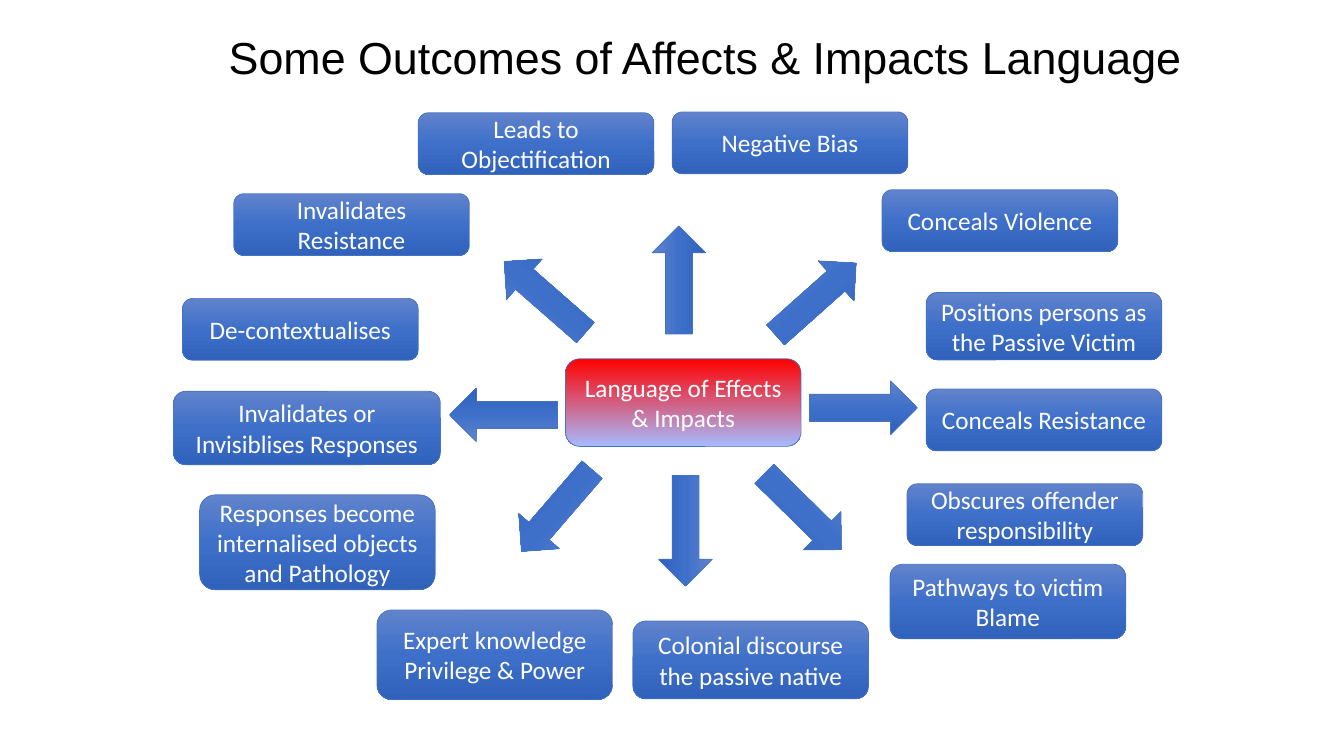
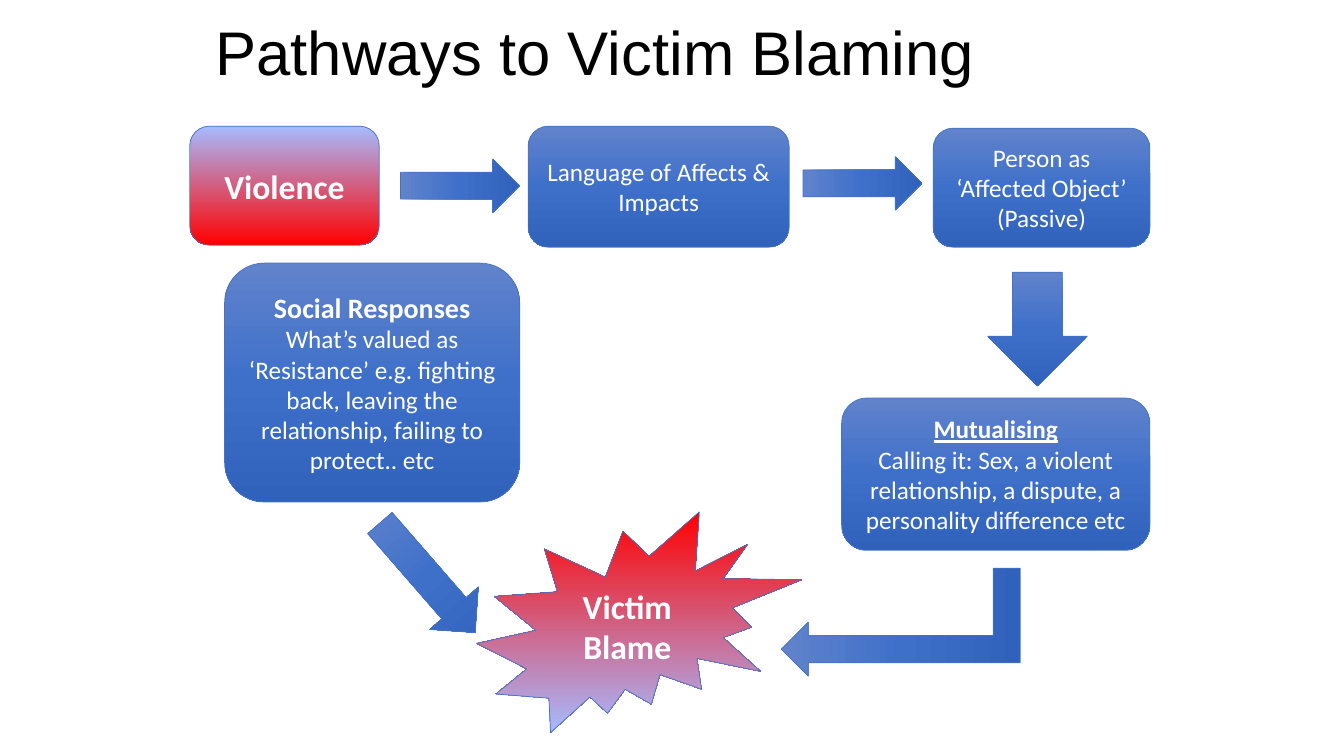
from copy import deepcopy

from pptx import Presentation
from pptx.dml.color import RGBColor
from pptx.enum.shapes import MSO_SHAPE
from pptx.enum.text import MSO_ANCHOR, MSO_AUTO_SIZE, PP_ALIGN
from pptx.oxml.ns import qn
from pptx.util import Cm, Pt

# Shared colours, each gradient running from top to bottom
BLUE = ["6183CB", "3E70CA", "3062BB"]
RED_TOP = ["FF0000", "A6BBFF"]
RED_BOTTOM = ["A6BBFF", "FF0000"]
OUTLINE = "4472C4"
WHITE = "FFFFFF"
BLACK = "000000"


def add_page(title, size, left, top, width, height):
    page = deck.slides.add_slide(deck.slide_layouts[5])
    box = page.shapes.title
    box.left, box.top, box.width, box.height = Cm(left), Cm(top), Cm(width), Cm(height)
    frame = box.text_frame
    frame.text = title
    frame.auto_size = MSO_AUTO_SIZE.NONE
    frame.vertical_anchor = MSO_ANCHOR.MIDDLE
    para = frame.paragraphs[0]
    para.alignment = PP_ALIGN.LEFT
    para.line_spacing = 0.9
    para.font.name = "Arial"
    para.font.size = Pt(size)
    para.font.color.rgb = RGBColor.from_string(BLACK)
    return page


def add_box(page, kind, left, top, width, height, lines=(), colours=BLUE, rotation=0):
    """Each line is (text, size, bold, underline)."""
    box = page.shapes.add_shape(kind, Cm(left), Cm(top), Cm(width), Cm(height))
    box.rotation = rotation
    box.shadow.inherit = False
    box.line.color.rgb = RGBColor.from_string(OUTLINE)
    box.line.width = Pt(0.5)

    box.fill.gradient()
    stops = box._element.spPr.find(qn("a:gradFill")).find(qn("a:gsLst"))
    while len(stops) < len(colours):
        stops.append(deepcopy(stops[-1]))
    for index, (stop, colour) in enumerate(zip(box.fill.gradient_stops, colours)):
        stop.color.rgb = RGBColor.from_string(colour)
        stop.position = index / (len(colours) - 1)
    box.fill.gradient_angle = 270

    frame = box.text_frame
    frame.word_wrap = True
    frame.vertical_anchor = MSO_ANCHOR.MIDDLE
    for index, (text, size, bold, underline) in enumerate(lines):
        para = frame.add_paragraph() if index else frame.paragraphs[0]
        para.text = text
        para.alignment = PP_ALIGN.CENTER
        para.font.name = "Calibri"
        para.font.size = Pt(size)
        para.font.bold = bold
        para.font.underline = underline
        para.font.color.rgb = RGBColor.from_string(WHITE)
    return box


deck = Presentation()
deck.slide_width, deck.slide_height = Cm(33.87), Cm(19.05)

# Slide 1: outcomes around a central box
page = add_page("Some Outcomes of Affects & Impacts Language", 32, 5.51, 0.76, 25.5, 1.5)

BOX_WIDTH, BOX_HEIGHT = 5.94, 1.56
outcomes = [
    ("Invalidates Resistance", 5.89, 4.88, BOX_WIDTH, BOX_HEIGHT),
    ("Obscures offender responsibility", 22.86, 12.19, BOX_WIDTH, BOX_HEIGHT),
    ("Positions persons as the Passive Victim", 23.34, 7.37, BOX_WIDTH, 1.7),
    ("De-contextualises", 4.6, 7.52, BOX_WIDTH, BOX_HEIGHT),
    ("Conceals Resistance", 23.34, 9.8, BOX_WIDTH, BOX_HEIGHT),
    ("Invalidates or Invisiblises Responses", 4.37, 9.86, 6.73, 1.85),
    ("Expert knowledge Privilege & Power", 9.5, 15.37, BOX_WIDTH, 2.26),
    ("Negative Bias", 16.94, 2.82, BOX_WIDTH, BOX_HEIGHT),
    ("Colonial discourse the passive native", 15.95, 15.65, BOX_WIDTH, 1.96),
    ("Conceals Violence", 22.23, 4.78, BOX_WIDTH, BOX_HEIGHT),
    ("Leads to Objectification", 10.54, 2.84, BOX_WIDTH, BOX_HEIGHT),
    ("Responses become internalised objects and Pathology", 5.03, 12.47, BOX_WIDTH, 2.39),
    ("Pathways to victim Blame", 22.43, 14.22, BOX_WIDTH, 1.88),
]
for text, *place in outcomes:
    add_box(page, MSO_SHAPE.ROUNDED_RECTANGLE, *place, [(text, 18, False, False)])
add_box(page, MSO_SHAPE.ROUNDED_RECTANGLE, 14.25, 9.04, BOX_WIDTH, 2.21,
        [("Language of Effects & Impacts", 18, False, False)], RED_TOP)

# Arrows pointing outwards: left, top, width, rotation
arrows = [
    (18.87, 12.22, 2.72, 44.6),
    (12.67, 12.19, 2.72, 130.8),
    (12.37, 6.81, 2.72, 221.2),
    (19.2, 6.86, 2.72, 318.3),
    (15.75, 6.38, 2.72, 270),
    (11.33, 9.78, 2.72, 180),
    (20.4, 9.6, 2.72, 0),
    (15.88, 12.7, 2.79, 90),
]
for left, top, width, rotation in arrows:
    add_box(page, MSO_SHAPE.RIGHT_ARROW, left, top, width, 1.35, rotation=rotation)

# Slide 2: flow that ends in victim blame
page = add_page("Pathways to Victim Blaming", 44, 5.18, 0.3, 22.86, 2.21)

add_box(page, MSO_SHAPE.EXPLOSION2, 12.01, 12.9, 8.2, 5.56,
        [("Victim Blame", 24, True, False)], RED_TOP)
add_box(page, MSO_SHAPE.ROUNDED_RECTANGLE, 4.78, 3.18, 4.78, 3,
        [("Violence", 24, True, False)], RED_BOTTOM)

steps = [
    (21.21, 10.03, 7.77, 3.84, [
        ("Mutualising", 18, True, True),
        ("Calling it: Sex, a violent relationship, a dispute, a personality difference etc",
         18, False, False)]),
    (13.31, 3.18, 6.58, 3.05, [("Language of Affects & Impacts", 18, False, False)]),
    (23.52, 3.23, 5.46, 3, [("Person as ‘Affected Object’ (Passive)", 18, False, False)]),
    (5.66, 6.63, 7.44, 6.02, [
        ("Social Responses", 20, True, False),
        ("What’s valued as ‘Resistance’ e.g. fighting back, leaving the relationship, "
         "failing to protect.. etc", 18, False, False)]),
]
for step in steps:
    add_box(page, MSO_SHAPE.ROUNDED_RECTANGLE, *step)

# Arrows between the steps: left, top, width, height, rotation
for *place, rotation in [
    (9.96, 12.73, 1.63, 3.66, 319),
    (24.89, 6.86, 2.51, 2.87, 0),
    (10.92, 3.18, 1.35, 3, 270),
    (21.06, 3.12, 1.35, 3, 270),
]:
    add_box(page, MSO_SHAPE.DOWN_ARROW, *place, rotation=rotation)
bent_arrow = add_box(page, MSO_SHAPE.BENT_UP_ARROW, 21.34, 12.67, 2.72, 6.02, rotation=270)
bent_arrow._element.spPr.find(qn("a:xfrm")).set("flipH", "1")

deck.save("out.pptx")
